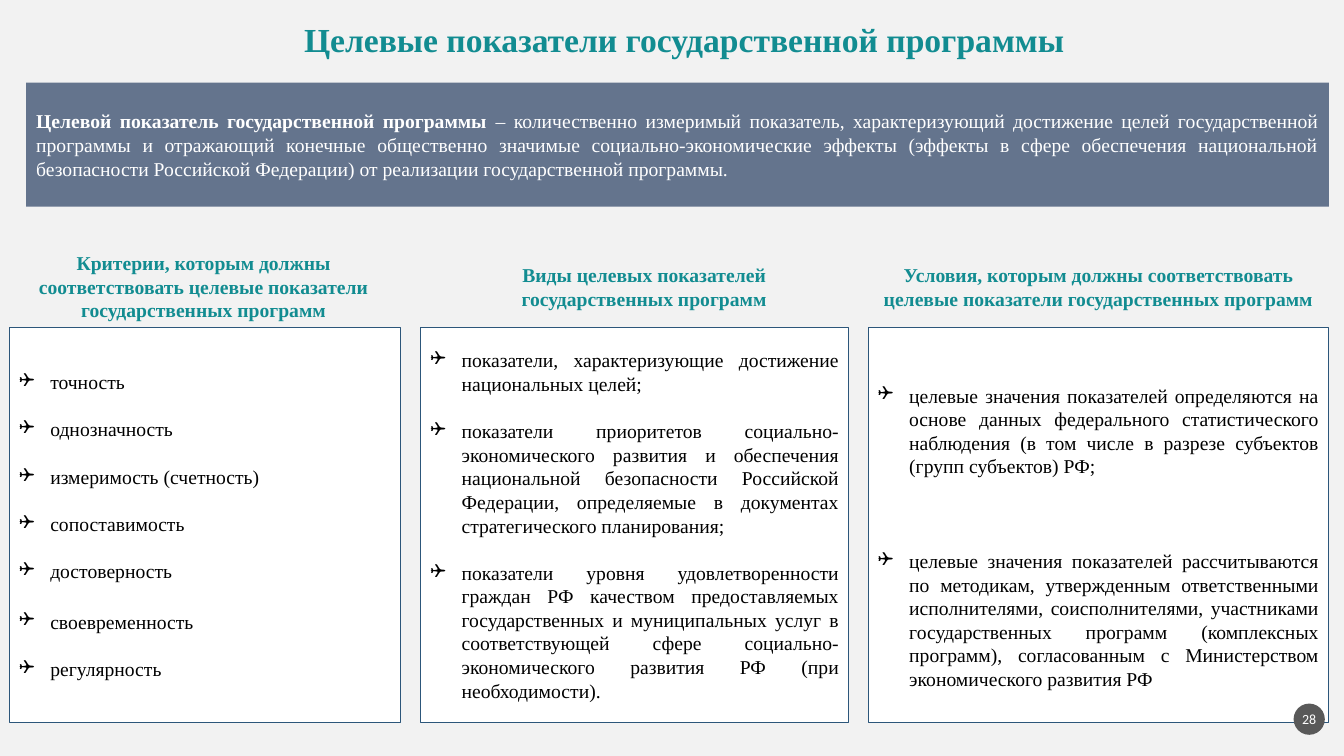
"""Builds the slide on target indicators of a state programme."""
from lxml.etree import SubElement
from pptx import Presentation
from pptx.dml.color import RGBColor
from pptx.enum.shapes import MSO_SHAPE
from pptx.enum.text import MSO_ANCHOR, PP_ALIGN
from pptx.oxml.ns import qn
from pptx.util import Inches, Pt

TITLE = "Целевые показатели государственной программы"
DEFINITION = [
    ("Целевой показатель государственной программы ", True),
    ("– количественно измеримый показатель, характеризующий достижение целей "
     "государственной программы и отражающий конечные общественно значимые "
     "социально-экономические эффекты (эффекты в сфере обеспечения национальной "
     "безопасности Российской Федерации) от реализации государственной программы.", False),
]
COLUMNS = [
    {
        "heading": "Критерии, которым должны соответствовать целевые показатели "
                   "государственных программ",
        "heading_span": (0.08, 3.88), "heading_lines": 3,
        "panel_span": (0.09, 3.88), "align": PP_ALIGN.LEFT, "top_inset": 0.05,
        "items": ["точность", "однозначность", "измеримость (счетность)",
                  "сопоставимость", "достоверность", "своевременность", "регулярность"],
        "gaps": [17, 17, 17, 17, 19, 17],
    },
    {
        "heading": "Виды целевых показателей государственных программ",
        "heading_span": (4.47, 3.84), "heading_lines": 2,
        "panel_span": (4.17, 4.25), "align": PP_ALIGN.JUSTIFY, "top_inset": 0.05,
        "items": [
            "показатели, характеризующие достижение национальных целей;",
            "показатели приоритетов социально-экономического развития и обеспечения "
            "национальной безопасности Российской Федерации, определяемые в документах "
            "стратегического планирования;",
            "показатели уровня удовлетворенности граждан РФ качеством предоставляемых "
            "государственных и муниципальных услуг в соответствующей сфере "
            "социально-экономического развития РФ (при необходимости).",
        ],
        "gaps": [17, 17],
    },
    {
        "heading": "Условия, которым должны соответствовать целевые показатели "
                   "государственных программ",
        "heading_span": (8.61, 4.57), "heading_lines": 2,
        "panel_span": (8.61, 4.57), "align": PP_ALIGN.JUSTIFY, "top_inset": 0.28,
        "items": [
            "целевые значения показателей определяются на основе данных федерального "
            "статистического наблюдения (в том числе в разрезе субъектов (групп "
            "субъектов) РФ;",
            "целевые значения показателей рассчитываются по методикам, утвержденным "
            "ответственными исполнителями, соисполнителями, участниками государственных "
            "программ (комплексных программ), согласованным с Министерством "
            "экономического развития РФ",
        ],
        "gaps": [51],
    },
]
PAGE_NUMBER = "28"

TEAL, NAVY, SLATE, GREY = "128C91", "2C567A", "64748D", "595959"
WHITE, BLACK, PAPER = "FFFFFF", "000000", "F2F2F2"
SERIF = "Times New Roman"
BODY = {"name": SERIF, "size": Pt(14), "bold": False}
HEADING = {"name": SERIF, "size": Pt(14), "bold": True}
HEADLINE = {"name": SERIF, "size": Pt(24), "bold": True}
NUMBER = {"name": "Calibri", "size": Pt(10), "bold": False}
PANEL_TOP, PANEL_HEIGHT = 3.25, 3.92
HEADING_MIDDLE, LINE_HEIGHT = 2.845, 0.24
INDENT = Inches(0.31)


def color(value):
    return RGBColor.from_string(value)


def add_span(para, text, style, ink):
    span = para.add_run()
    span.text = text
    for name, value in style.items():
        setattr(span.font, name, value)
    span.font.color.rgb = color(ink)


def set_frame(box, anchor, insets=(0.1, 0.05, 0.1, 0.05)):
    frame = box.text_frame
    frame.word_wrap = True
    frame.vertical_anchor = anchor
    sides = ("margin_left", "margin_top", "margin_right", "margin_bottom")
    for side, inset in zip(sides, insets):
        setattr(frame, side, Inches(inset))
    return frame


def add_block(page, kind, place, fill, line=None):
    block = page.shapes.add_shape(kind, *map(Inches, place))
    block.shadow.inherit = False
    block.fill.solid()
    block.fill.fore_color.rgb = color(fill)
    if line:
        block.line.color.rgb = color(line)
        block.line.width = Pt(0.75)
    else:
        block.line.fill.background()
    return block


def add_bullet(para):
    properties = para._p.get_or_add_pPr()
    properties.set("marL", str(INDENT))
    properties.set("indent", str(-INDENT))
    SubElement(properties, qn("a:buFont"), typeface="Wingdings")
    SubElement(properties, qn("a:buChar"), char="❑")


def add_panel(page, column):
    left, width = column["panel_span"]
    panel = add_block(page, MSO_SHAPE.RECTANGLE,
                      (left, PANEL_TOP, width, PANEL_HEIGHT), WHITE, NAVY)
    frame = set_frame(panel, MSO_ANCHOR.MIDDLE, (0.1, column["top_inset"], 0.1, 0.05))
    for index, (item, gap) in enumerate(zip(column["items"], [0] + column["gaps"])):
        para = frame.add_paragraph() if index else frame.paragraphs[0]
        add_bullet(para)
        para.alignment = column["align"]
        if gap:
            para.space_before = Pt(gap)
        add_span(para, item, BODY, BLACK)


def add_heading(page, column):
    left, width = column["heading_span"]
    height = 0.09 + LINE_HEIGHT * column["heading_lines"]
    place = (left, HEADING_MIDDLE - height / 2, width, height)
    box = page.shapes.add_textbox(*map(Inches, place))
    para = set_frame(box, MSO_ANCHOR.TOP).paragraphs[0]
    para.alignment = PP_ALIGN.CENTER
    add_span(para, column["heading"], HEADING, TEAL)


def add_title(page):
    title = page.shapes.title
    title.left, title.top, title.width, title.height = map(Inches, (2.45, 0.14, 8.67, 0.5))
    para = set_frame(title, MSO_ANCHOR.TOP).paragraphs[0]
    para.alignment = PP_ALIGN.CENTER
    add_span(para, TITLE, HEADLINE, TEAL)


def add_definition(page):
    banner = add_block(page, MSO_SHAPE.RECTANGLE, (0.26, 0.82, 12.92, 1.23), SLATE)
    para = set_frame(banner, MSO_ANCHOR.MIDDLE).paragraphs[0]
    para.alignment = PP_ALIGN.JUSTIFY
    for text, bold in DEFINITION:
        add_span(para, text, HEADING if bold else BODY, WHITE)


def add_page_number(page):
    badge = add_block(page, MSO_SHAPE.OVAL, (12.83, 6.98, 0.31, 0.31), GREY)
    para = set_frame(badge, MSO_ANCHOR.MIDDLE, (0, 0, 0, 0)).paragraphs[0]
    para.alignment = PP_ALIGN.CENTER
    add_span(para, PAGE_NUMBER, NUMBER, WHITE)


def main():
    deck = Presentation()
    deck.slide_width, deck.slide_height = Inches(13.33), Inches(7.5)
    page = deck.slides.add_slide(deck.slide_layouts[5])
    page.background.fill.solid()
    page.background.fill.fore_color.rgb = color(PAPER)
    add_title(page)
    add_definition(page)
    for column in COLUMNS:
        add_heading(page, column)
        add_panel(page, column)
    add_page_number(page)
    deck.save("out.pptx")


if __name__ == "__main__":
    main()
